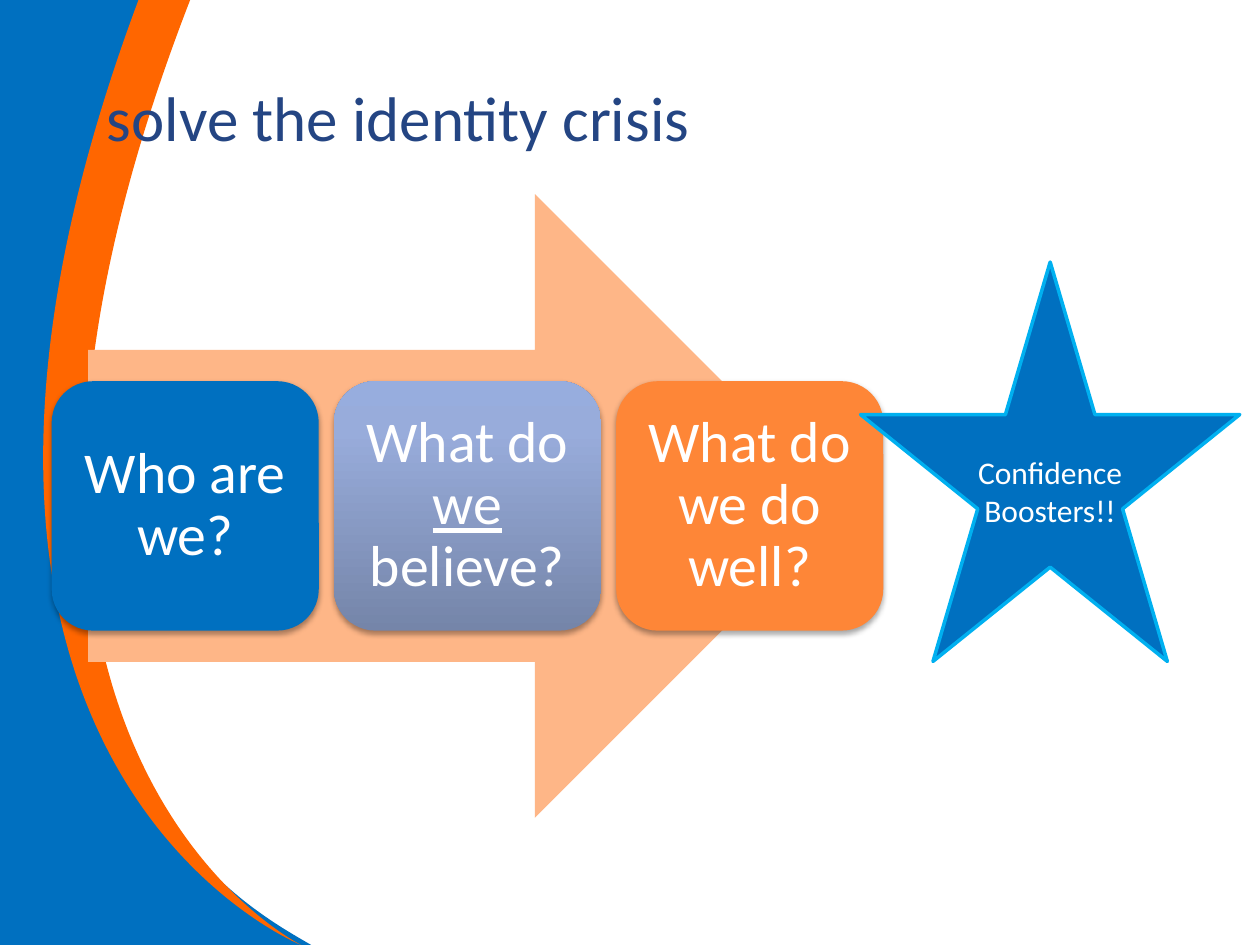
from copy import deepcopy

from lxml.etree import SubElement
from pptx import Presentation
from pptx.dml.color import RGBColor
from pptx.enum.shapes import MSO_SHAPE
from pptx.enum.text import MSO_ANCHOR, PP_ALIGN
from pptx.oxml import parse_xml
from pptx.oxml.ns import nsdecls, qn
from pptx.util import Inches, Pt

BLUE, ORANGE, WHITE = "0070C0", "FF6600", "FFFFFF"
BLUE_SWOOSH = [
    [(1.24, 0)],
    [(0.99, 0.71), (0.55, 1.86), (0.54, 3.27)],
    [(0.47, 6.39), (1.95, 7.2), (2.47, 7.5)],
    [(-0.06, 7.5)],
    [(-0.04, 0)],
    [(0.4, 0), (0.84, 0), (1.24, 0)],
]
ORANGE_SWOOSH = [
    [(1.51, 0)],
    [(-0.79, 5.92), (2.39, 7.5), (2.39, 7.5)],
    [(2.39, 7.5), (-1.17, 6.07), (1.1, 0)],
    [(1.1, 0), (1.16, 0), (1.51, 0)],
]
QUESTIONS = [
    ([("Who are we?", False)], [(0, BLUE)]),
    ([("What do ", False), ("we", True), (" believe?", False)],
     [(0, "7585A9"), (0.8, "98ACDB"), (1, "97ADDE")]),
    ([("What do we do well?", False)], [(0, "FE8637")]),
]


def color(hex_value):
    """Turn a hex string into a colour."""
    return RGBColor.from_string(hex_value)


def apply(target, values):
    """Set every attribute in values on target."""
    for name, value in values.items():
        setattr(target, name, value)


def paint(shape, stops):
    """Fill a shape with one colour or an upward gradient, without line or shadow."""
    shape.shadow.inherit = False
    shape.line.fill.background()
    if len(stops) == 1:
        shape.fill.solid()
        shape.fill.fore_color.rgb = color(stops[0][1])
        return
    shape.fill.gradient()
    shape.fill.gradient_angle = 90
    stop_list = shape._element.spPr.find(".//" + qn("a:gsLst"))
    while len(stop_list) < len(stops):
        stop_list.append(deepcopy(stop_list[0]))
    for stop, (position, hex_value) in zip(shape.fill.gradient_stops, stops):
        stop.position = position
        stop.color.rgb = color(hex_value)


def cast_shadow(shape):
    """Give a shape a soft shadow straight below it."""
    effects = shape._element.spPr.find(qn("a:effectLst"))
    effects.append(parse_xml(
        f'<a:outerShdw {nsdecls("a")} blurRad="{Pt(3.1)}" dist="{Pt(1.8)}" '
        'dir="5400000" algn="t" rotWithShape="0"><a:srgbClr val="000000">'
        '<a:alpha val="35000"/></a:srgbClr></a:outerShdw>'))


def write(shape, lines, size, hex_value, frame_format, paragraph_format):
    """Write lines of (text, underlined) runs into a shape."""
    frame = shape.text_frame
    apply(frame, {"vertical_anchor": MSO_ANCHOR.MIDDLE, **frame_format})
    for index, runs in enumerate(lines):
        paragraph = frame.add_paragraph() if index else frame.paragraphs[0]
        apply(paragraph, paragraph_format)
        for text, underlined in runs:
            run = paragraph.add_run()
            run.text = text
            apply(run.font, {"name": "Calibri", "size": Pt(size)})
            run.font.color.rgb = color(hex_value)
            if underlined:
                run.font.underline = True


def add_swoosh(slide, left, top, segments, hex_value):
    """Draw a closed band of lines (one point) and cubic curves (three points)."""
    points = [(left + Inches(x), top + Inches(y)) for segment in segments for x, y in segment]
    builder = slide.shapes.build_freeform(*points[0])
    builder.add_line_segments(points[1:], close=True)
    swoosh = builder.convert_to_shape()
    outline = swoosh._element.spPr.find(".//" + qn("a:path"))
    steps = list(outline)
    outline[:] = []
    for segment in segments:
        members, steps = steps[:len(segment)], steps[len(segment):]
        if len(members) == 1:
            outline.append(members[0])
            continue
        curve = SubElement(outline, qn("a:cubicBezTo"))
        curve.extend([member[0] for member in members])
    outline.extend(steps)
    paint(swoosh, [(0, hex_value)])


def add_title(slide, left, top, width, height):
    """Place the slide title."""
    title = slide.shapes.add_textbox(left, top, width, height)
    write(title, [[("solve the identity crisis", False)]], 36, "244583",
          {"word_wrap": True}, {"alignment": PP_ALIGN.LEFT})


def add_card(slide, left, top, width, height, runs, stops):
    """Draw one question card with its label centred inside."""
    card = slide.shapes.add_shape(MSO_SHAPE.ROUNDED_RECTANGLE, left, top, width, height)
    paint(card, stops)
    cast_shadow(card)
    label_width, label_height = Inches(1.93), Inches(1.79)
    label = slide.shapes.add_textbox(
        left + (width - label_width) // 2, top + (height - label_height) // 2,
        label_width, label_height)
    margins = {f"margin_{side}": Inches(0.14) for side in ("left", "top", "right", "bottom")}
    write(label, [runs], 33, WHITE, {"word_wrap": True, **margins},
          {"alignment": PP_ALIGN.CENTER, "line_spacing": 0.9})


def add_process(slide, left, top, width, height):
    """Draw the arrow with the question cards spread across the box."""
    arrow_width = Inches(6.02)
    arrow = slide.shapes.add_shape(
        MSO_SHAPE.RIGHT_ARROW, left + (width - arrow_width) // 2, top, arrow_width, height)
    paint(arrow, [(0, "FEB687")])
    card_width, card_height = Inches(2.12), height * 2 // 5
    step = (width - card_width) // (len(QUESTIONS) - 1)
    for index, (runs, stops) in enumerate(QUESTIONS):
        add_card(slide, left + index * step, top + (height - card_height) // 2,
                 card_width, card_height, runs, stops)


def add_star(slide, left, top, width, height):
    """Draw the outlined star with its label."""
    star = slide.shapes.add_shape(MSO_SHAPE.STAR_5_POINT, left, top, width, height)
    paint(star, [(0, BLUE)])
    star.line.color.rgb = color("00B0F0")
    star.line.width = Pt(2)
    write(star, [[("Confidence", False)], [("Boosters!!", False)]], 18, WHITE,
          {"word_wrap": False}, {"alignment": PP_ALIGN.CENTER})


def main():
    """Build and save the slide."""
    deck = Presentation()
    apply(deck, {"slide_width": Inches(10), "slide_height": Inches(7.5)})
    slide = deck.slides.add_slide(deck.slide_layouts[6])
    add_swoosh(slide, 0, 0, BLUE_SWOOSH, BLUE)
    add_swoosh(slide, 0, 0, ORANGE_SWOOSH, ORANGE)
    add_title(slide, Inches(0.75), Inches(0.3), Inches(8.75), Inches(1.25))
    add_process(slide, Inches(0.41), Inches(1.54), Inches(6.6), Inches(4.95))
    add_star(slide, Inches(6.83), Inches(2.08), Inches(3.01), Inches(3.17))
    deck.save("out.pptx")


if __name__ == "__main__":
    main()
